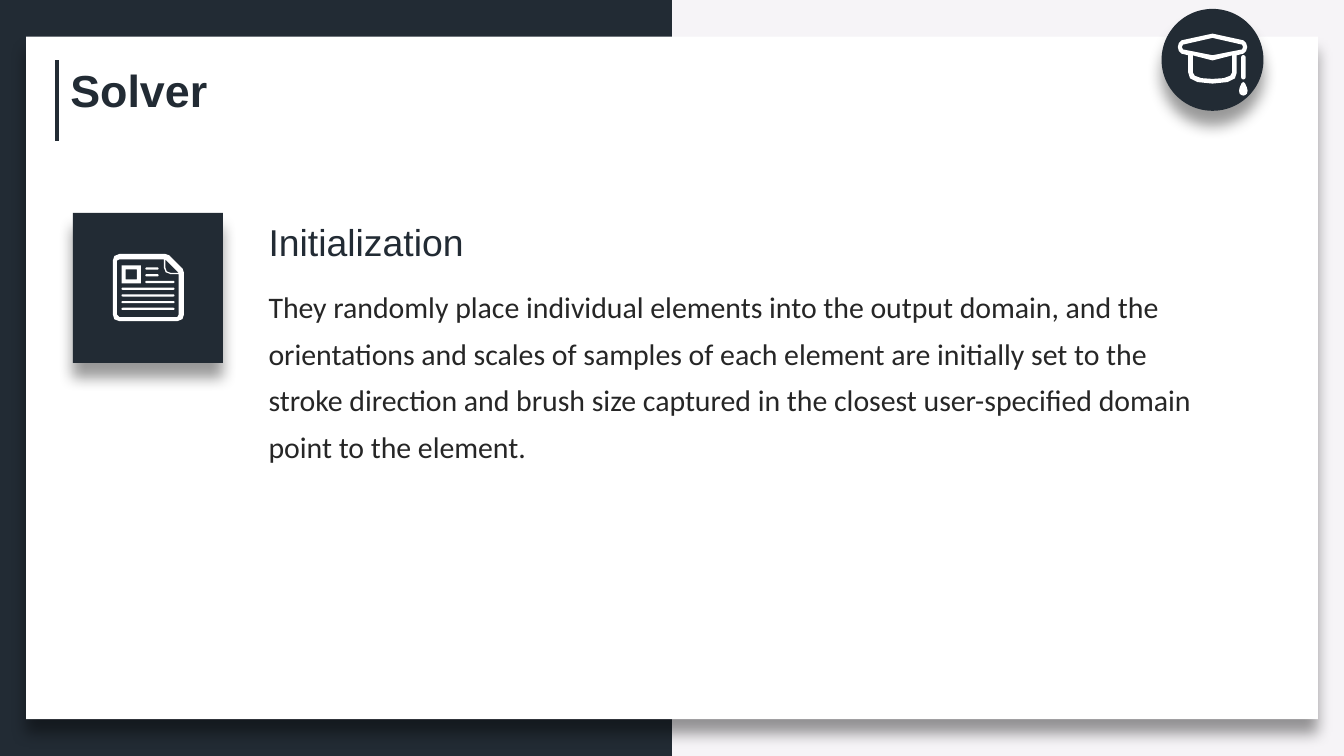
import lxml.etree
import pptx
import pptx.dml.color
import pptx.enum.shapes
import pptx.oxml.ns
import pptx.util

Pt = pptx.util.Pt
SHAPES = pptx.enum.shapes.MSO_SHAPE
NAVY, WHITE, PALE, BODY = "222B34", "FFFFFF", "F6F4F7", "262626"

CAP_CENTRE, TASSEL_CENTRE = 649.6, 666.1
CAP_HALVES = [
    [(0, 18), (16.5, 21.6), (18, 23), (18.6, 25.2), (18, 27.4), (16.5, 28.8),
     (13, 29.6), (13, 38.9), (12, 42), (8, 44), (0, 44.8)],
    [(0, 20.3), (15.8, 23.9), (16.4, 25.2), (15.8, 26.5), (0, 29.6)],
    [(0, 32.4), (10.5, 29.7), (10.5, 38.9), (9.5, 40.6), (6, 41.9), (0, 42.3)],
]
TASSEL_HALF = [(0, 43.9), (0.9, 44.6), (1.9, 46.8), (2.3, 48.6),
               (1.9, 50.3), (0.9, 51), (0, 51.2)]
PAGE_CONTOURS = [
    [(64, 136.1), (88.6, 136.1), (90.7, 136.8), (97.9, 144), (98.6, 146.2),
     (98.6, 168.5), (97.8, 171), (95, 172.1), (64, 172.1), (61.3, 171.1),
     (60.5, 168.5), (60.5, 139.7), (61.3, 137.2)],
    [(64, 139), (87.8, 139), (87.8, 143.3), (88.8, 145.9), (91.4, 146.9),
     (95.8, 146.9), (95.8, 168.5), (95, 169.9), (64, 169.9), (62.6, 168.5),
     (62.6, 139.7)],
    [(88.6, 139), (95.8, 146.2), (91.4, 146.2), (89.4, 145.4), (88.6, 143.3)],
]
PAGE_LINES = [(77.9, 7.1)] * 2 + [(77.9, 15.6)] + [(65.1, 28.4)] * 4


def color(value):
    """Return the colour for a hex string."""
    return pptx.dml.color.RGBColor.from_string(value)


def paint(shape, fill):
    """Give a shape a plain fill without outline or shadow."""
    shape.shadow.inherit = False
    shape.fill.solid()
    shape.fill.fore_color.rgb = color(fill)
    shape.line.fill.background()


def add_shape(slide, kind, left, top, width, height, fill):
    """Add a filled preset shape."""
    shape = slide.shapes.add_shape(kind, Pt(left), Pt(top), Pt(width), Pt(height))
    paint(shape, fill)
    return shape


def add_drop_shadow(shape):
    """Cast a soft black shadow straight down from a shape."""
    effects = shape._element.spPr.find(pptx.oxml.ns.qn("a:effectLst"))
    shadow = lxml.etree.SubElement(
        effects, pptx.oxml.ns.qn("a:outerShdw"), blurRad=str(Pt(8)),
        dist=str(Pt(8)), dir="5400000", algn="t", rotWithShape="0")
    shade = lxml.etree.SubElement(shadow, pptx.oxml.ns.qn("a:srgbClr"), val="000000")
    lxml.etree.SubElement(shade, pptx.oxml.ns.qn("a:alpha"), val="40000")


def add_outline(slide, contours, fill):
    """Add a freeform whose later contours are cut out of the first."""
    points = [[(Pt(x), Pt(y)) for x, y in contour] for contour in contours]
    builder = slide.shapes.build_freeform(*points[0][0])
    builder.add_line_segments(points[0][1:])
    for contour in points[1:]:
        builder.move_to(*contour[0])
        builder.add_line_segments(contour[1:])
    paint(builder.convert_to_shape(), fill)


def mirror(half, centre):
    """Complete a right half-contour with its reflection about the centre."""
    right = [(centre + x, y) for x, y in half]
    left = [(centre - x, y) for x, y in reversed(half[1:-1])]
    return right + left


def add_line(slide, start, end, stroke, width):
    """Add a straight line."""
    line = slide.shapes.add_connector(
        pptx.enum.shapes.MSO_CONNECTOR.STRAIGHT, *map(Pt, start + end))
    line.line.color.rgb = color(stroke)
    line.line.width = Pt(width)
    lxml.etree.SubElement(line._element.spPr, pptx.oxml.ns.qn("a:effectLst"))


def add_text(slide, left, top, width, height, text, font, size, ink,
             bold=False, wrap=False):
    """Add a text box with one run and return its paragraph."""
    box = slide.shapes.add_textbox(Pt(left), Pt(top), Pt(width), Pt(height))
    box.text_frame.word_wrap = wrap
    paragraph = box.text_frame.paragraphs[0]
    run = paragraph.add_run()
    run.text = text
    run.font.name = font
    run.font.size = Pt(size)
    run.font.bold = bold
    run.font.color.rgb = color(ink)
    return paragraph


def add_cap_badge(slide):
    """Draw the graduation cap in its round badge."""
    badge = add_shape(slide, SHAPES.OVAL, 622.3, 4.8, 54.6, 54.6, NAVY)
    add_drop_shadow(badge)
    add_outline(slide, [mirror(half, CAP_CENTRE) for half in CAP_HALVES], WHITE)
    cord = add_shape(slide, SHAPES.ROUNDED_RECTANGLE,
                     TASSEL_CENTRE - 1.2, 29.5, 2.4, 13, WHITE)
    cord.adjustments[0] = 0.5
    add_outline(slide, [mirror(TASSEL_HALF, TASSEL_CENTRE)], WHITE)


def add_page_tile(slide):
    """Draw the written page on its square tile."""
    tile = add_shape(slide, SHAPES.RECTANGLE, 39.1, 114, 80.4, 80.4, NAVY)
    add_drop_shadow(tile)
    add_outline(slide, PAGE_CONTOURS, WHITE)
    for row, (left, width) in enumerate(PAGE_LINES):
        line = add_shape(slide, SHAPES.ROUNDED_RECTANGLE,
                         left, 143.3 + 3.6 * row, width, 1.2, WHITE)
        line.adjustments[0] = 0.5
    frame = add_shape(slide, SHAPES.FRAME, 65.1, 142.2, 10.4, 9.7, WHITE)
    frame.adjustments[0] = 0.23


def main():
    """Build the slide and save it."""
    presentation = pptx.Presentation()
    presentation.slide_width, presentation.slide_height = Pt(720), Pt(405)
    slide = presentation.slides.add_slide(presentation.slide_layouts[6])
    slide.background.fill.solid()
    slide.background.fill.fore_color.rgb = color(PALE)

    add_shape(slide, SHAPES.RECTANGLE, 0, 0, 360, 405, NAVY)
    card = add_shape(slide, SHAPES.RECTANGLE, 14, 19.7, 692, 365.6, WHITE)
    add_drop_shadow(card)
    add_line(slide, (30.6, 32.2), (30.6, 75.6), NAVY, 2.25)
    add_cap_badge(slide)
    add_text(slide, 30.6, 29.8, 88.6, 36.3, "Solver", "Arial", 24, NAVY, bold=True)

    add_page_tile(slide)
    add_text(slide, 136.8, 114, 120.2, 31.5, "Initialization", "Arial", 20, NAVY)
    description = add_text(
        slide, 136.8, 145.5, 512, 105.8,
        "They randomly place individual elements into the output domain, and the "
        "orientations and scales of samples of each element are initially set to the "
        "stroke direction and brush size captured in the closest user-specified "
        "domain point to the element.", "Calibri", 16, BODY, wrap=True)
    description.line_spacing = 1.3
    description.space_before = Pt(6)

    presentation.save("out.pptx")


if __name__ == "__main__":
    main()
